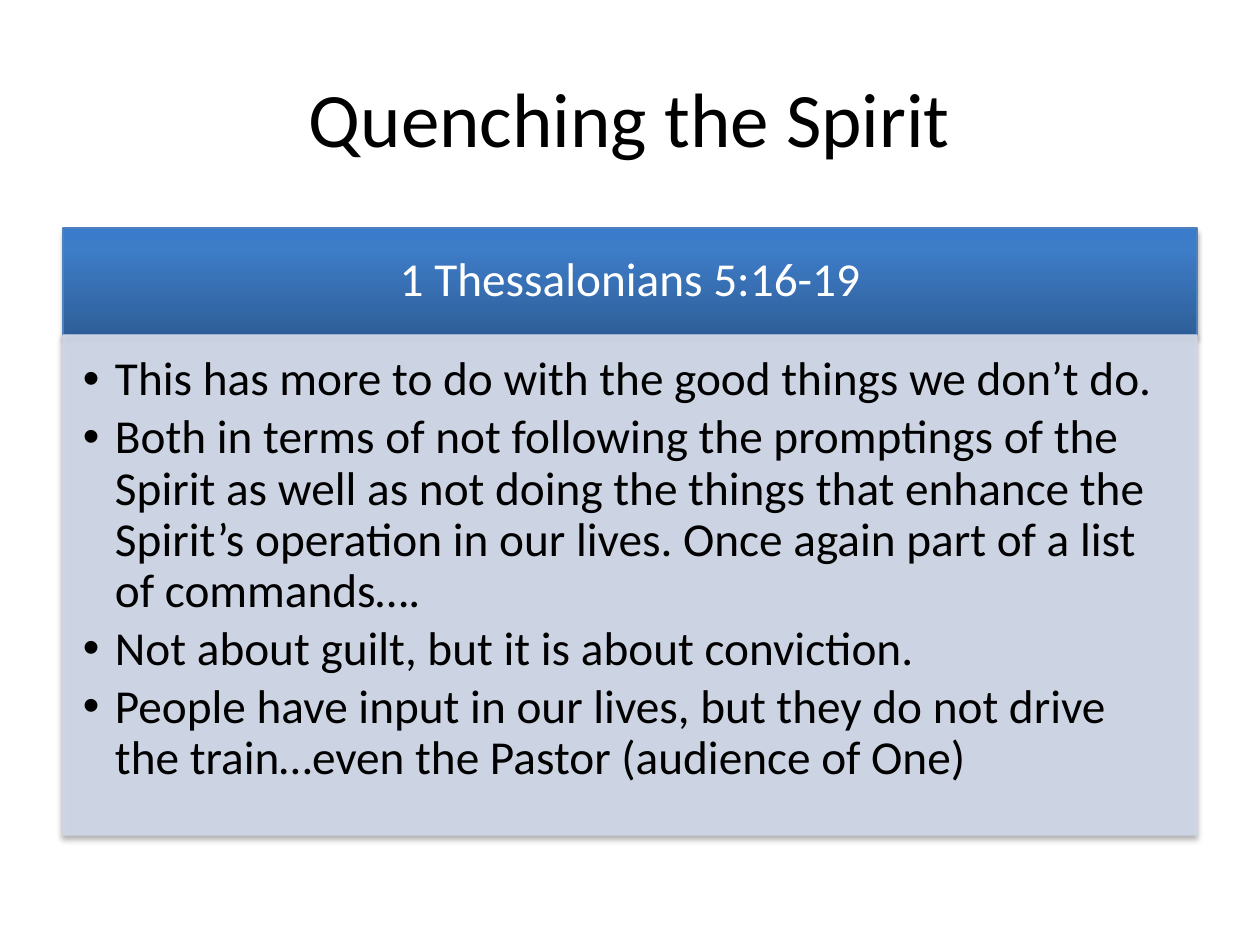
from dataclasses import dataclass

from lxml import etree
from pptx import Presentation
from pptx.dml.color import RGBColor
from pptx.enum.shapes import MSO_SHAPE
from pptx.enum.text import MSO_ANCHOR, MSO_AUTO_SIZE, PP_ALIGN
from pptx.oxml.ns import qn
from pptx.shapes.autoshape import Shape
from pptx.util import Emu, Pt

RECTANGLE = MSO_SHAPE.RECTANGLE
TOP, MIDDLE = MSO_ANCHOR.TOP, MSO_ANCHOR.MIDDLE
LEFT, CENTER = PP_ALIGN.LEFT, PP_ALIGN.CENTER
NO_AUTOFIT = MSO_AUTO_SIZE.NONE

BLACK = RGBColor(0x00, 0x00, 0x00)
WHITE = RGBColor(0xFF, 0xFF, 0xFF)
HEADER_LINE = RGBColor(0x4F, 0x81, 0xBD)
PANEL_BLUE = RGBColor(0xD0, 0xD8, 0xE8)
HEADER_STOPS = (
    (0, RGBColor(0x2F, 0x5F, 0x99)),
    (80, RGBColor(0x3D, 0x7C, 0xC7)),
    (100, RGBColor(0x3A, 0x7C, 0xCB)),
)
FONT = "Calibri"
PANEL_OPACITY = 90
BULLET_INDENT = 32

TITLE = "Quenching the Spirit"
HEADER = "1 Thessalonians 5:16-19"
POINTS = (
    "This has more to do with the good things we don’t do.",
    "Both in terms of not following the promptings of the Spirit as well as not "
    "doing the things that enhance the Spirit’s operation in our lives. "
    "Once again part of a list of commands….",
    "Not about guilt, but it is about conviction.",
    "People have input in our lives, but they do not drive the train…"
    "even the Pastor (audience of One)",
)


def px(length: int) -> Emu:
    return Emu(round(length * 914400 / 126))


@dataclass(frozen=True)
class Box:
    left: int
    top: int
    width: int
    height: int


@dataclass(frozen=True)
class TextStyle:
    size: int
    color: RGBColor
    align: PP_ALIGN
    anchor: MSO_ANCHOR
    insets: tuple[int, int, int, int]
    line_spacing: float = 0.9
    space_after: int = 0


TITLE_BOX = Box(63, 38, 1134, 157)
HEADER_BOX = Box(63, 228, 1134, 107)
PANEL_BOX = Box(63, HEADER_BOX.top + HEADER_BOX.height, 1134, 500)
TITLE_STYLE = TextStyle(44, BLACK, CENTER, MIDDLE, (13, 6, 13, 6), 1.0)
HEADER_STYLE = TextStyle(27, WHITE, CENTER, MIDDLE, (26, 15, 26, 15))
PANEL_STYLE = TextStyle(27, BLACK, LEFT, TOP, (20, 20, 26, 30), space_after=4)


def place(shape: Shape, box: Box) -> None:
    shape.left, shape.top = px(box.left), px(box.top)
    shape.width, shape.height = px(box.width), px(box.height)


def write(shape: Shape, text: str, style: TextStyle) -> None:
    frame = shape.text_frame
    frame.text = text
    frame.word_wrap = True
    frame.auto_size = NO_AUTOFIT
    frame.vertical_anchor = style.anchor
    (frame.margin_left, frame.margin_top,
     frame.margin_right, frame.margin_bottom) = map(px, style.insets)
    for paragraph in frame.paragraphs:
        paragraph.alignment = style.align
        paragraph.line_spacing = style.line_spacing
        paragraph.space_before = Pt(0)
        paragraph.space_after = Pt(style.space_after)
        for run in paragraph.runs:
            run.font.name = FONT
            run.font.size = Pt(style.size)
            run.font.color.rgb = style.color


def add_color(parent: etree._Element, color: RGBColor, opacity: int = 100) -> None:
    element = etree.SubElement(parent, qn("a:srgbClr"), val=str(color))
    etree.SubElement(element, qn("a:alpha"), val=str(opacity * 1000))


def outline(shape: Shape, color: RGBColor) -> None:
    shape.line.color.rgb = color
    shape.line.width = Pt(0.75)


def add_shadow(shape: Shape) -> None:
    shape.shadow.inherit = False
    effects = shape._element.spPr.find(qn("a:effectLst"))
    shadow = etree.SubElement(
        effects, qn("a:outerShdw"), blurRad=str(Pt(3.1)), dist=str(Pt(1.8)),
        dir="5400000", rotWithShape="0",
    )
    add_color(shadow, BLACK, 35)


def fill_header(shape: Shape) -> None:
    shape.fill.gradient()
    shape.fill.gradient_angle = 90
    stops = shape._element.spPr.find(f".//{qn('a:gsLst')}")
    stops[:] = []
    for position, color in HEADER_STOPS:
        stop = etree.SubElement(stops, qn("a:gs"), pos=str(position * 1000))
        add_color(stop, color)


def fill_panel(shape: Shape) -> None:
    """Give the panel its translucent fill and matching outline."""
    shape.fill.solid()
    shape.fill.fore_color.rgb = PANEL_BLUE
    outline(shape, PANEL_BLUE)
    for color in shape._element.spPr.iter(qn("a:srgbClr")):
        etree.SubElement(color, qn("a:alpha"), val=str(PANEL_OPACITY * 1000))


def indent_bullets(shape: Shape) -> None:
    for paragraph in shape.text_frame.paragraphs:
        properties = paragraph._p.get_or_add_pPr()
        properties.set("marL", str(px(BULLET_INDENT)))
        properties.set("indent", str(-px(BULLET_INDENT)))


def main() -> None:
    presentation = Presentation()
    presentation.slide_width, presentation.slide_height = px(1260), px(945)
    slide = presentation.slides.add_slide(presentation.slide_layouts[1])
    title, panel = slide.placeholders

    place(title, TITLE_BOX)
    write(title, TITLE, TITLE_STYLE)

    header = slide.shapes.add_shape(RECTANGLE, 0, 0, 0, 0)
    place(header, HEADER_BOX)
    fill_header(header)
    outline(header, HEADER_LINE)
    add_shadow(header)
    write(header, HEADER, HEADER_STYLE)
    panel._element.addprevious(header._element)

    place(panel, PANEL_BOX)
    fill_panel(panel)
    add_shadow(panel)
    write(panel, "\n".join(POINTS), PANEL_STYLE)
    indent_bullets(panel)

    presentation.save("out.pptx")


if __name__ == "__main__":
    main()
